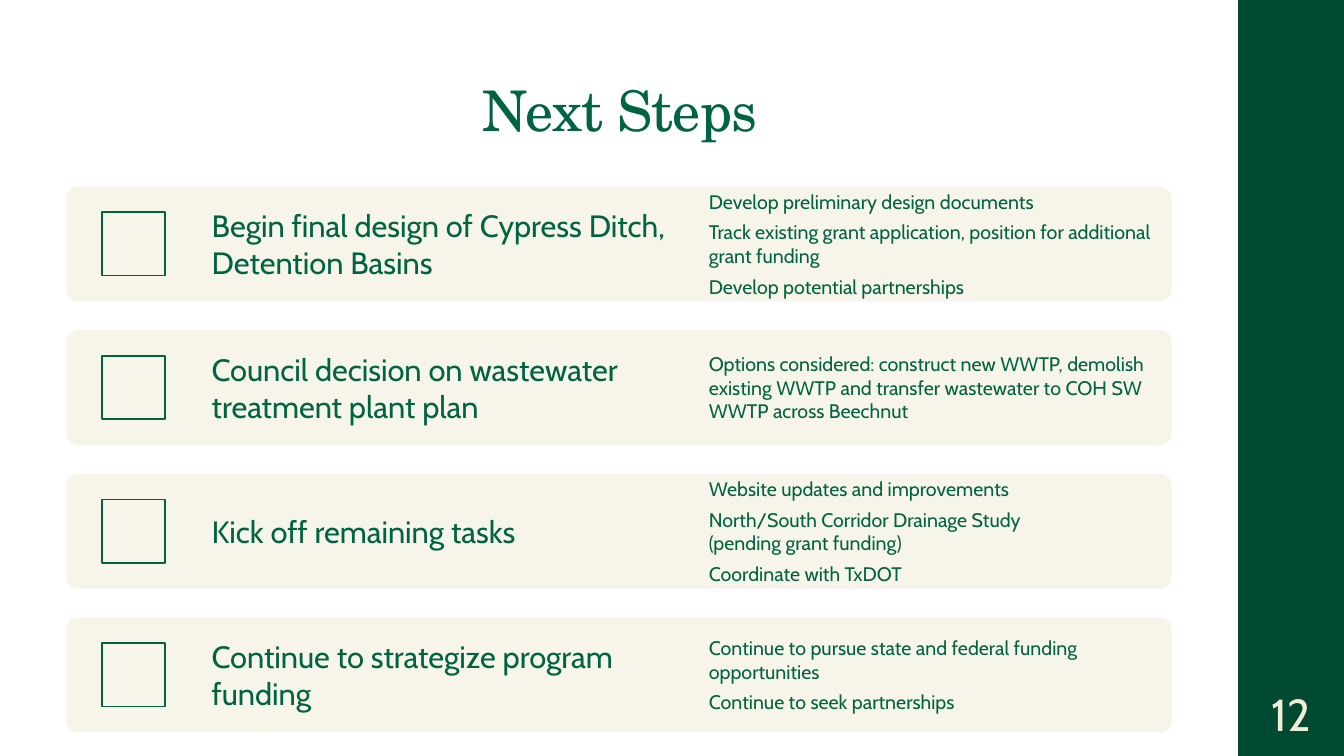
from pptx import Presentation
from pptx.dml.color import RGBColor
from pptx.enum.shapes import MSO_SHAPE
from pptx.enum.text import MSO_ANCHOR, MSO_AUTO_SIZE, PP_ALIGN
from pptx.util import Inches, Pt

GREEN, DARK_GREEN, CREAM, PALE = "006341", "004A31", "F7F4E9", "F3EEDA"
STEPS = [
    ("Begin final design of Cypress Ditch, Detention Basins",
     ["Develop preliminary design documents",
      "Track existing grant application, position for additional grant funding",
      "Develop potential partnerships"]),
    ("Council decision on wastewater treatment plant plan",
     ["Options considered: construct new WWTP, demolish existing WWTP "
      "and transfer wastewater to COH SW WWTP across Beechnut"]),
    ("Kick off remaining tasks",
     ["Website updates and improvements",
      "North/South Corridor Drainage Study\n(pending grant funding)",
      "Coordinate with TxDOT"]),
    ("Continue to strategize program funding",
     ["Continue to pursue state and federal funding opportunities",
      "Continue to seek partnerships"]),
]
ROW_TOP, ROW_PITCH, ROW_HEIGHT, BOX_SIZE = 1.85, 1.425, 1.14, 0.63


def rgb(value):
    return RGBColor.from_string(value)


class SlideBuilder:
    """Holds the text style and the slide being filled."""

    style = {"name": "Cabin", "color": GREEN, "size": 14}

    def __init__(self, prs):
        self.slide = prs.slides.add_slide(prs.slide_layouts[5])

    def shape(self, kind, at, fill=None, line=None):
        sp = self.slide.shapes.add_shape(kind, *map(Inches, at))
        sp.shadow.inherit = False
        if fill:
            sp.fill.solid()
            sp.fill.fore_color.rgb = rgb(fill)
        else:
            sp.fill.background()
        if line:
            sp.line.color.rgb = rgb(line)
            sp.line.width = Pt(1.1)
        else:
            sp.line.fill.background()
        return sp

    def fill_text(self, tf, paragraphs, insets=(0.12, 0.12),
                  align=PP_ALIGN.LEFT, spacing=None, **font):
        """Fill a text frame; insets are horizontal and vertical."""
        across, down = map(Inches, insets)
        frame = {"word_wrap": True, "auto_size": MSO_AUTO_SIZE.NONE,
                 "vertical_anchor": MSO_ANCHOR.MIDDLE,
                 "margin_left": across, "margin_right": across,
                 "margin_top": down, "margin_bottom": down}
        for name, value in frame.items():
            setattr(tf, name, value)
        style = {**self.style, **font}
        for i, text in enumerate(paragraphs):
            p = tf.paragraphs[0] if i == 0 else tf.add_paragraph()
            p.text = text
            p.alignment = align
            p.line_spacing = spacing
            p.space_before = Pt(5 if i else 0)
            for r in p.runs:
                r.font.name = style["name"]
                r.font.size = Pt(style["size"])
                r.font.color.rgb = rgb(style["color"])

    def text(self, at, paragraphs, **options):
        sp = self.slide.shapes.add_textbox(*map(Inches, at))
        self.fill_text(sp.text_frame, paragraphs, **options)

    def title(self, at, text):
        sp = self.slide.shapes.title
        sp.left, sp.top, sp.width, sp.height = map(Inches, at)
        self.fill_text(sp.text_frame, [text], insets=(0.1, 0.05), spacing=0.9,
                       align=PP_ALIGN.CENTER, name="TeX Gyre Schola", size=40)
        r = sp.text_frame.paragraphs[0].runs[0]
        r._r.get_or_add_rPr().set("spc", "-50")

    def step(self, top, heading, details):
        """Draw one row: card, empty check box, heading and details."""
        card = self.shape(MSO_SHAPE.ROUNDED_RECTANGLE,
                          (0.66, top, 10.96, ROW_HEIGHT), fill=CREAM)
        card.adjustments[0] = 0.1
        box_top = top + (ROW_HEIGHT - BOX_SIZE) / 2
        self.shape(MSO_SHAPE.RECTANGLE, (1.01, box_top, BOX_SIZE, BOX_SIZE),
                   line=GREEN)
        self.text((1.98, top, 4.93, ROW_HEIGHT), [heading], size=22)
        self.text((6.91, top, 4.71, ROW_HEIGHT), details)


def main():
    prs = Presentation()
    prs.slide_width, prs.slide_height = Inches(13.33), Inches(7.5)
    s = SlideBuilder(prs)
    s.shape(MSO_SHAPE.RECTANGLE, (12.28, 0, 1.05, 7.5), fill=DARK_GREEN)
    s.title((0.32, 0.4, 11.66, 1.45), "Next Steps")
    for i, (heading, details) in enumerate(STEPS):
        s.step(ROW_TOP + i * ROW_PITCH, heading, details)
    s.text((12.31, 6.75, 1, 0.65), ["12"], insets=(0.03, 0.05),
           align=PP_ALIGN.CENTER, size=32, color=PALE)
    prs.save("out.pptx")


if __name__ == "__main__":
    main()
